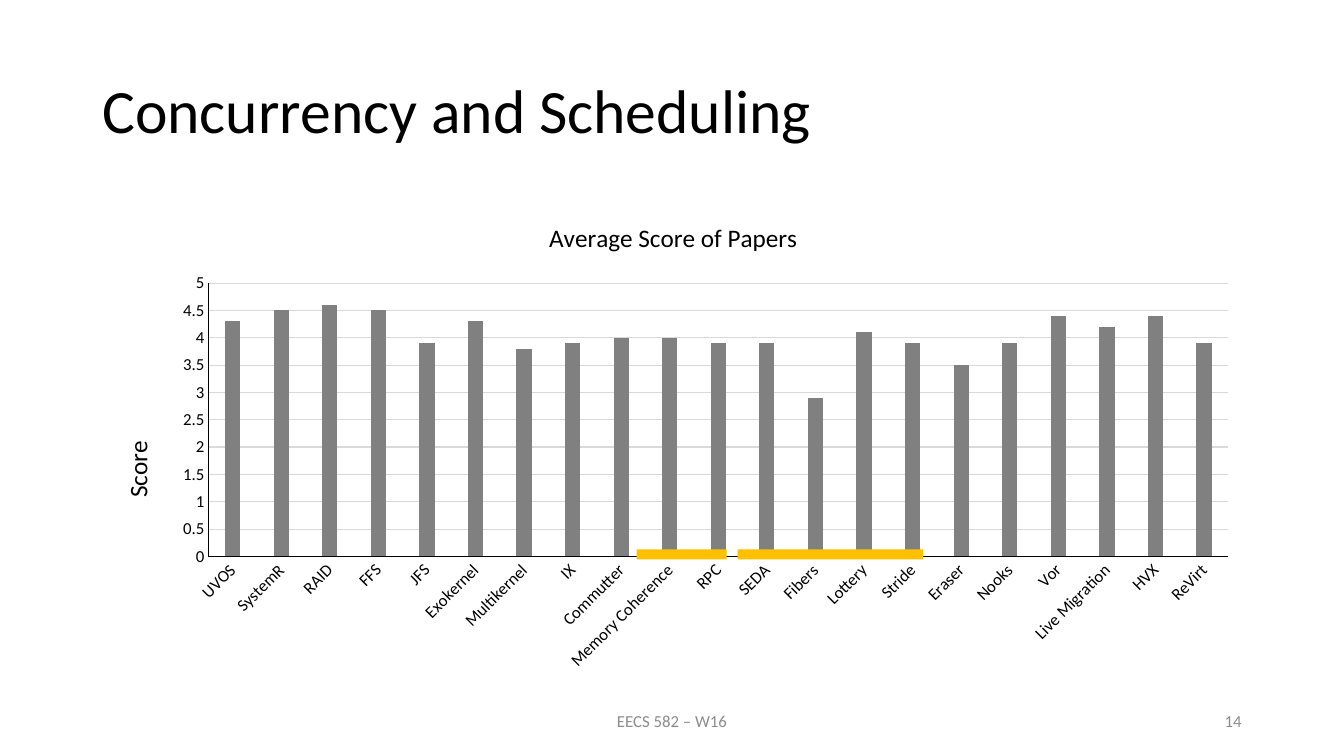
from lxml.etree import SubElement
from pptx import Presentation
from pptx.chart.data import CategoryChartData
from pptx.dml.color import RGBColor
from pptx.enum.chart import XL_CHART_TYPE as ChartType, XL_TICK_MARK as TickMark
from pptx.enum.shapes import MSO_SHAPE as Shape
from pptx.enum.text import MSO_ANCHOR as Anchor, PP_ALIGN as Align
from pptx.oxml.ns import qn
from pptx.util import Inches, Pt

COLUMNS, ROWS = 160, 90
BLACK, BAR_GREY, GRID_GREY = "000000", "808080", "D9D9D9"
FOOTER_GREY, HIGHLIGHT = "8C8C8C", "FFC000"

SCORES = {
    "UVOS": 4.3, "SystemR": 4.5, "RAID": 4.6, "FFS": 4.5, "JFS": 3.9,
    "Exokernel": 4.3, "Multikernel": 3.8, "IX": 3.9, "Commutter": 4,
    "Memory Coherence": 4, "RPC": 3.9, "SEDA": 3.9, "Fibers": 2.9,
    "Lottery": 4.1, "Stride": 3.9, "Eraser": 3.5, "Nooks": 3.9,
    "Vor": 4.4, "Live Migration": 4.2, "HVX": 4.4, "ReVirt": 3.9,
}


def color(value):
    return RGBColor.from_string(value)


class SlideBuilder:
    def __init__(self, presentation, font_name="Calibri"):
        self.font_name = font_name
        self.column = presentation.slide_width / COLUMNS
        self.row = presentation.slide_height / ROWS
        self.slide = presentation.slides.add_slide(presentation.slide_layouts[6])

    def box(self, left, top, width, height):
        return (round(left * self.column), round(top * self.row),
                round(width * self.column), round(height * self.row))

    def style(self, font, size, fill=BLACK):
        font.name, font.size, font.bold = self.font_name, Pt(size), False
        font.color.rgb = color(fill)

    def line(self, line_format, fill):
        line_format.color.rgb = color(fill)
        line_format.width = Pt(0.75)

    def text(self, text, area, size, fill=BLACK, align=Align.LEFT, spacing=1.0):
        frame = self.slide.shapes.add_textbox(*self.box(*area)).text_frame
        frame.word_wrap = True
        frame.vertical_anchor = Anchor.MIDDLE
        frame.text = text
        paragraph = frame.paragraphs[0]
        paragraph.alignment = align
        paragraph.line_spacing = spacing
        self.style(paragraph.runs[0].font, size, fill)

    def bar(self, area, fill):
        shape = self.slide.shapes.add_shape(Shape.RECTANGLE, *self.box(*area))
        shape.shadow.inherit = False
        shape.fill.solid()
        shape.fill.fore_color.rgb = color(fill)
        shape.line.fill.background()

    def title(self, owner, text, size):
        frame = owner.text_frame
        frame.text = text
        self.style(frame.paragraphs[0].runs[0].font, size)

    def place(self, element, index, **settings):
        for old in element.findall(qn("c:layout")):
            element.remove(old)
        layout = SubElement(element, qn("c:layout"))
        element.insert(index, layout)
        manual = SubElement(layout, qn("c:manualLayout"))
        for name, value in settings.items():
            SubElement(manual, qn(f"c:{name}")).set("val", str(value))

    def axis(self, axis):
        axis.major_tick_mark = axis.minor_tick_mark = TickMark.NONE
        self.style(axis.tick_labels.font, 12)
        self.line(axis.format.line, BLACK)

    def column_chart(self, scores, area, title, value_title):
        data = CategoryChartData()
        data.categories = list(scores)
        data.add_series("Series 1", list(scores.values()))
        chart = self.slide.shapes.add_chart(
            ChartType.COLUMN_CLUSTERED, *self.box(*area), data).chart
        self.style(chart.font, 10)
        chart.has_legend = False
        self.title(chart.chart_title, title, 18)

        plot = chart.plots[0]
        plot.gap_width, plot.overlap = 219, -27
        plot.vary_by_categories = False
        series = plot.series[0]
        series.format.fill.solid()
        series.format.fill.fore_color.rgb = color(BAR_GREY)

        categories, values = chart.category_axis, chart.value_axis
        self.axis(categories)
        self.axis(values)
        values.minimum_scale, values.maximum_scale = 0, 5
        values.major_unit = 0.5
        values.tick_labels.number_format = "General"
        values.tick_labels.number_format_is_linked = False
        self.line(values.major_gridlines.format.line, GRID_GREY)
        self.title(values.axis_title, value_title, 18)

        root = chart._chartSpace
        root.xpath(".//c:catAx/c:txPr/a:bodyPr")[0].set("rot", "-2700000")
        title_body = root.xpath(".//c:valAx/c:title//a:bodyPr")[0]
        title_body.set("rot", "-5400000")
        title_body.set("vert", "horz")
        edges = dict(xMode="edge", yMode="edge")
        self.place(root.xpath("c:chart/c:title")[0], 1, **edges, x=0.39, y=0.03)
        self.place(root.xpath(".//c:valAx/c:title")[0], 1, **edges, x=0.02, y=0.49)
        self.place(root.xpath(".//c:plotArea")[0], 0, layoutTarget="inner",
                   **edges, x=0.1, y=0.17, w=0.88, h=0.57)


def main():
    presentation = Presentation()
    presentation.slide_width = Inches(13.33)
    presentation.slide_height = Inches(7.5)
    builder = SlideBuilder(presentation)

    builder.text("Concurrency and Scheduling", (11, 4.8, 138, 17.4), 44, spacing=0.9)
    builder.text("EECS 582 – W16", (53, 83.4, 54, 4.8), 12, FOOTER_GREY, Align.CENTER)
    builder.text("14", (113, 83.4, 36, 4.8), 12, FOOTER_GREY, Align.RIGHT)
    builder.column_chart(SCORES, (11, 24, 138, 57.1), "Average Score of Papers", "Score")
    for left, width in ((75.8, 10.7), (87.8, 22.1)):
        builder.bar((left, 65.4, width, 1.2), HIGHLIGHT)

    presentation.save("out.pptx")


if __name__ == "__main__":
    main()
